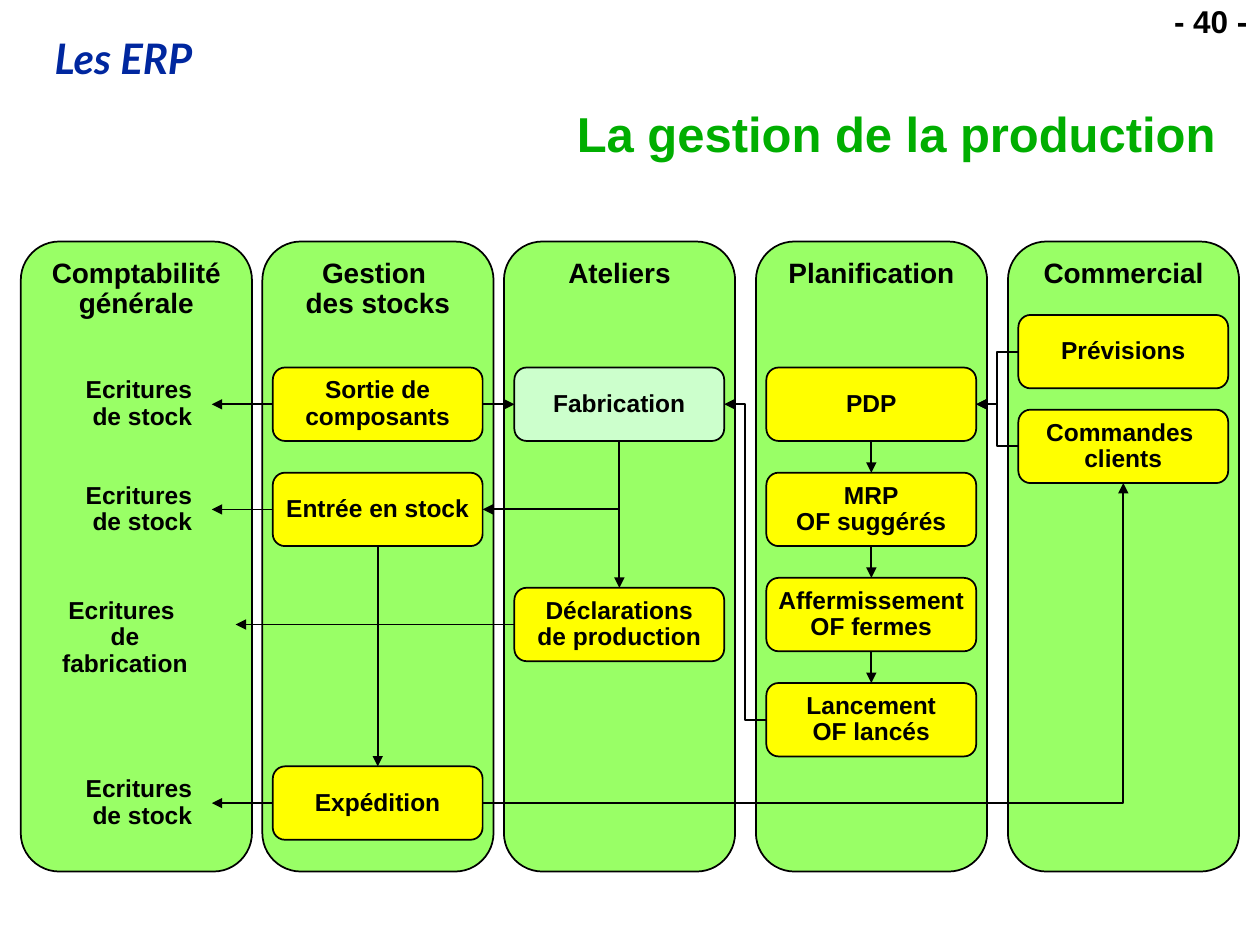
from lxml import etree
from pptx import Presentation
from pptx.dml.color import RGBColor
from pptx.enum.shapes import MSO_CONNECTOR, MSO_SHAPE
from pptx.enum.text import MSO_ANCHOR, MSO_AUTO_SIZE, PP_ALIGN
from pptx.oxml.ns import qn
from pptx.util import Cm, Pt

ROUNDED = MSO_SHAPE.ROUNDED_RECTANGLE
STRAIGHT, ELBOW = MSO_CONNECTOR.STRAIGHT, MSO_CONNECTOR.ELBOW
LEFT, CENTER, RIGHT = PP_ALIGN.LEFT, PP_ALIGN.CENTER, PP_ALIGN.RIGHT
ANCHOR_TOP, ANCHOR_MIDDLE = MSO_ANCHOR.TOP, MSO_ANCHOR.MIDDLE
NO_AUTOFIT = MSO_AUTO_SIZE.NONE
TOP_SIDE, LEFT_SIDE, BOTTOM_SIDE, RIGHT_SIDE = range(4)


def write_text(shape, *paragraphs, size=14, color="000000", font="Arial", italic=False,
               align=CENTER, anchor=ANCHOR_TOP, wrap=False):
    frame = shape.text_frame
    frame.auto_size = NO_AUTOFIT
    frame.word_wrap = wrap
    frame.vertical_anchor = anchor
    for index, text in enumerate(paragraphs):
        paragraph = frame.add_paragraph() if index else frame.paragraphs[0]
        paragraph.text = text
        paragraph.alignment = align
        paragraph.line_spacing = 0.9
        for run in paragraph.runs:
            run.font.name = font
            run.font.size = Pt(size)
            run.font.bold = True
            run.font.italic = italic
            run.font.color.rgb = RGBColor.from_string(color)


def add_panel(left, top, width, height, fill):
    shape = slide.shapes.add_shape(ROUNDED, Cm(left), Cm(top), Cm(width), Cm(height))
    shape.shadow.inherit = False
    shape.fill.solid()
    shape.fill.fore_color.rgb = RGBColor.from_string(fill)
    shape.line.color.rgb = RGBColor.from_string("000000")
    shape.line.width = Pt(1)
    return shape


presentation = Presentation()
presentation.slide_width, presentation.slide_height = Cm(25.4), Cm(19.05)
slide = presentation.slides.add_slide(presentation.slide_layouts[5])

# Title, course name and page number
title = slide.shapes.title
title.left, title.top, title.width, title.height = Cm(1.06), Cm(2.12), Cm(23.7), Cm(1.27)
write_text(title, "La gestion de la production", size=28, color="00AE00",
           align=RIGHT, anchor=ANCHOR_MIDDLE, wrap=True)
course = slide.shapes.add_textbox(Cm(0.85), Cm(0.64), Cm(20.5), Cm(1.17))
write_text(course, "Les ERP", size=24, color="00279F", font="Lato", italic=True,
           align=LEFT, wrap=True)
page = slide.shapes.add_textbox(Cm(23.09), 0, Cm(2.31), Cm(0.94))
write_text(page, "- 40 -", size=18, align=RIGHT)

# Department columns
columns = {
    "accounting": (0.42, "Comptabilité\ngénérale"),
    "stock": (5.29, "Gestion \ndes stocks"),
    "workshop": (10.16, "Ateliers"),
    "planning": (15.24, "Planification"),
    "sales": (20.32, "Commercial"),
}
for left, heading in columns.values():
    write_text(add_panel(left, 4.87, 4.66, 12.7, "99FF66"), heading, size=16)

# Process steps: planning sets the row pitch, other columns share it where they can
BOX_WIDTH, BOX_HEIGHT, BOX_MARGIN = 4.23, 1.48, 0.21
FIRST_ROW, ROW_PITCH = 7.41, 2.12
rows = [FIRST_ROW + ROW_PITCH * row for row in range(4)]
steps = [
    ("forecast", "sales", 6.35, "Prévisions"),
    ("orders", "sales", 8.26, "Commandes \nclients"),
    ("pdp", "planning", rows[0], "PDP"),
    ("mrp", "planning", rows[1], "MRP\nOF suggérés"),
    ("firming", "planning", rows[2], "Affermissement\nOF fermes"),
    ("launch", "planning", rows[3], "Lancement\nOF lancés"),
    ("making", "workshop", rows[0], "Fabrication"),
    ("reporting", "workshop", 11.85, "Déclarations\nde production"),
    ("issue", "stock", rows[0], "Sortie de\ncomposants"),
    ("receipt", "stock", rows[1], "Entrée en stock"),
    ("shipping", "stock", 15.45, "Expédition"),
]
nodes = {}
for name, column, top, text in steps:
    fill = "CCFFCC" if name == "making" else "FFFF00"
    nodes[name] = add_panel(columns[column][0] + BOX_MARGIN, top, BOX_WIDTH, BOX_HEIGHT, fill)
    write_text(nodes[name], text, anchor=ANCHOR_MIDDLE)

# Accounting entries, each centred on the step it comes from
entries = [
    ("issue", 1.47, 2.8, "de stock"),
    ("receipt", 1.47, 2.8, "de stock"),
    ("reporting", 1.02, 3.73, "de fabrication"),
    ("shipping", 1.47, 2.8, "de stock"),
]
LABEL_HEIGHT = Cm(1.32)
for source, left, width, subject in entries:
    step = nodes[source]
    label_top = step.top + (step.height - LABEL_HEIGHT) // 2
    label = slide.shapes.add_textbox(Cm(left), label_top, Cm(width), LABEL_HEIGHT)
    write_text(label, "Ecritures ", subject, wrap=source == "reporting")
    nodes[source + " entry"] = label
production_frame = nodes["reporting entry"].text_frame
production_frame.margin_left, production_frame.margin_right = Cm(0.13), Cm(0.86)

# Flows: preset, start, start side, end, end side, arrowhead
flows = [
    ("bentConnector3", "forecast", LEFT_SIDE, "pdp", RIGHT_SIDE, "tailEnd"),
    ("bentConnector3", "orders", LEFT_SIDE, "pdp", RIGHT_SIDE, "tailEnd"),
    ("line", "pdp", BOTTOM_SIDE, "mrp", TOP_SIDE, "tailEnd"),
    ("line", "mrp", BOTTOM_SIDE, "firming", TOP_SIDE, "tailEnd"),
    ("line", "firming", BOTTOM_SIDE, "launch", TOP_SIDE, "tailEnd"),
    ("bentConnector3", "launch", LEFT_SIDE, "making", RIGHT_SIDE, "tailEnd"),
    ("line", "issue", RIGHT_SIDE, "making", LEFT_SIDE, "tailEnd"),
    ("line", "making", BOTTOM_SIDE, "reporting", TOP_SIDE, "tailEnd"),
    ("bentConnector2", "receipt", RIGHT_SIDE, "making", BOTTOM_SIDE, "headEnd"),
    ("line", "receipt", BOTTOM_SIDE, "shipping", TOP_SIDE, "tailEnd"),
    ("bentConnector2", "shipping", RIGHT_SIDE, "orders", BOTTOM_SIDE, "tailEnd"),
]
flows += [("line", source, LEFT_SIDE, source + " entry", RIGHT_SIDE, "tailEnd")
          for source, *_ in entries]
for preset, start, start_side, end, end_side, arrowhead in flows:
    kind = STRAIGHT if preset == "line" else ELBOW
    connector = slide.shapes.add_connector(kind, 0, 0, 0, 0)
    connector.begin_connect(nodes[start], start_side)
    connector.end_connect(nodes[end], end_side)
    connector.line.color.rgb = RGBColor.from_string("000000")
    connector.line.width = Pt(1)
    properties = connector._element.spPr
    properties.find(qn("a:prstGeom")).set("prst", preset)
    etree.SubElement(properties.find(qn("a:ln")), qn("a:" + arrowhead), type="triangle")
    etree.SubElement(properties, qn("a:effectLst"))

presentation.save("out.pptx")
